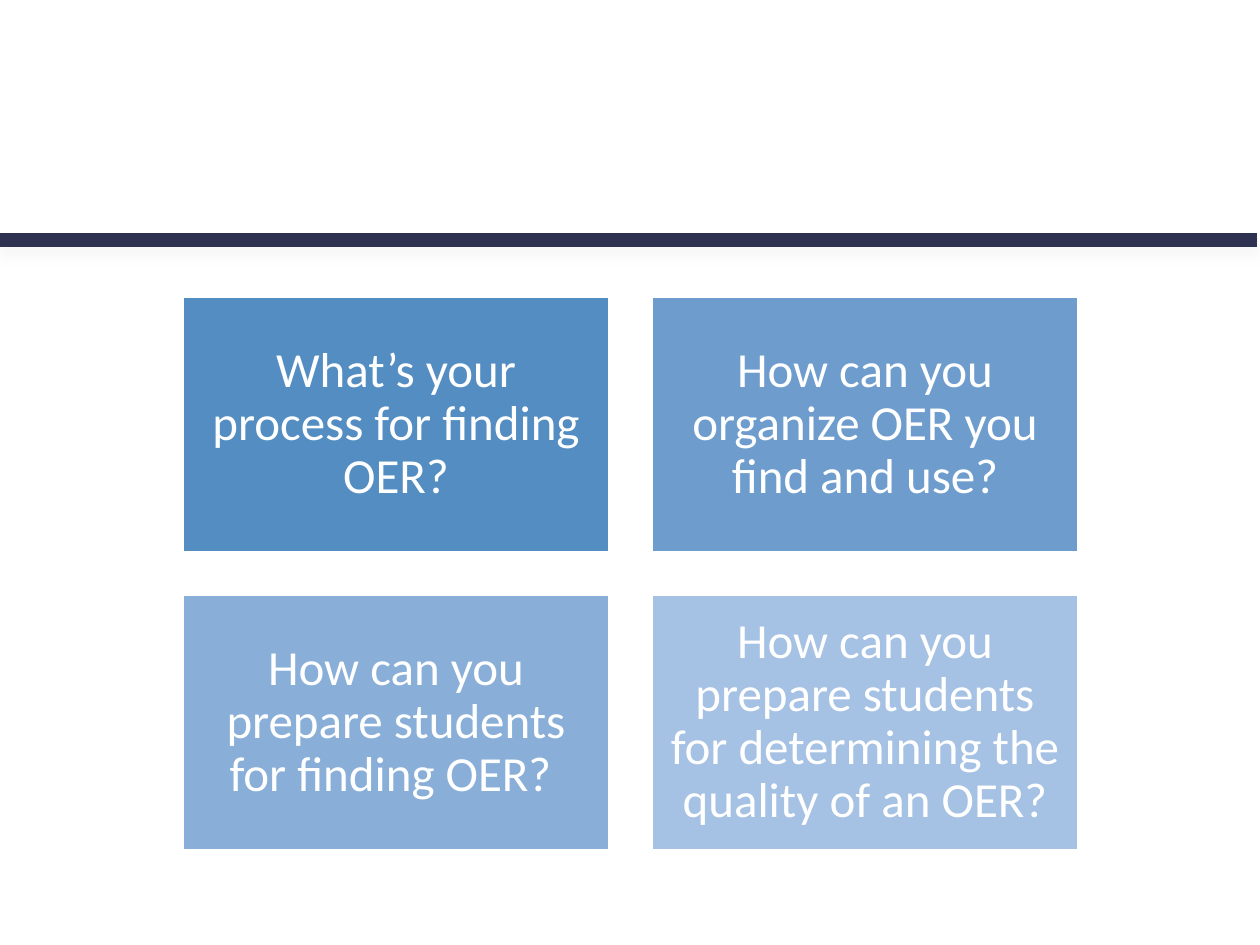
from lxml import etree
from pptx import Presentation
from pptx import util as u
from pptx.dml.color import RGBColor
from pptx.enum import shapes, text
from pptx.oxml import parse_xml
from pptx.oxml.ns import nsdecls

PX_PER_INCH = 126
WHITE = RGBColor(0xFF, 0xFF, 0xFF)
NAVY = RGBColor(0x2F, 0x31, 0x51)
QUESTIONS = [
    ("What’s your process for finding OER?", RGBColor(0x53, 0x8D, 0xC1)),
    ("How can you organize OER you find and use?", RGBColor(0x6E, 0x9D, 0xCD)),
    ("How can you prepare students for finding OER? ", RGBColor(0x89, 0xAF, 0xD8)),
    ("How can you prepare students for determining the quality of an OER?",
     RGBColor(0xA5, 0xC1, 0xE3)),
]
SOFT_SHADOW = (
    f'<a:effectLst {nsdecls("a")}>'
    f'<a:outerShdw blurRad="{u.Pt(6)}" dist="{u.Pt(5)}" dir="5400000" rotWithShape="0">'
    '<a:srgbClr val="EAEAEA"><a:alpha val="40000"/></a:srgbClr>'
    '</a:outerShdw></a:effectLst>'
)


def px(length):
    return u.Emu(round(length * 914400 / PX_PER_INCH))


def add_divider(slide, left, top, width):
    divider = slide.shapes.add_connector(
        shapes.MSO_CONNECTOR.STRAIGHT, px(left), px(top), px(left + width), px(top))
    divider.line.color.rgb = NAVY
    divider.line.width = u.Pt(7.75)
    divider._element.spPr.append(parse_xml(SOFT_SHADOW))


def add_question_card(slide, left, top, width, height, question, color):
    card = slide.shapes.add_shape(
        shapes.MSO_SHAPE.RECTANGLE, px(left), px(top), px(width), px(height))
    card.shadow.inherit = False
    card.fill.solid()
    card.fill.fore_color.rgb = color
    card.line.color.rgb = WHITE
    card.line.width = u.Pt(1)
    frame = card.text_frame
    frame.word_wrap = True
    frame.vertical_anchor = text.MSO_ANCHOR.MIDDLE
    frame.margin_left = frame.margin_right = px(15)
    frame.margin_top = frame.margin_bottom = px(15)
    paragraph = frame.paragraphs[0]
    paragraph.text = question
    paragraph.alignment = text.PP_ALIGN.CENTER
    paragraph.line_spacing = 0.9
    paragraph.font.name = "Calibri"
    paragraph.font.size = u.Pt(28)
    paragraph.font.color.rgb = WHITE


def add_question_grid(slide, left, top, width, height, gap, columns=2):
    rows = len(QUESTIONS) // columns
    card_width = (width - gap * (columns - 1)) // columns
    card_height = (height - gap * (rows - 1)) // rows
    for index, (question, color) in enumerate(QUESTIONS):
        row, column = divmod(index, columns)
        add_question_card(
            slide, left + column * (card_width + gap), top + row * (card_height + gap),
            card_width, card_height, question, color)


def main():
    presentation = Presentation()
    presentation.slide_width = px(1260)
    presentation.slide_height = px(945)
    slide = presentation.slides.add_slide(presentation.slide_layouts[6])
    slide.background.fill.solid()
    slide.background.fill.fore_color.rgb = WHITE
    add_divider(slide, 0, 240, 1257)
    add_question_grid(slide, 183, 297, 895, 554, 43)
    presentation.save("out.pptx")


if __name__ == "__main__":
    main()
